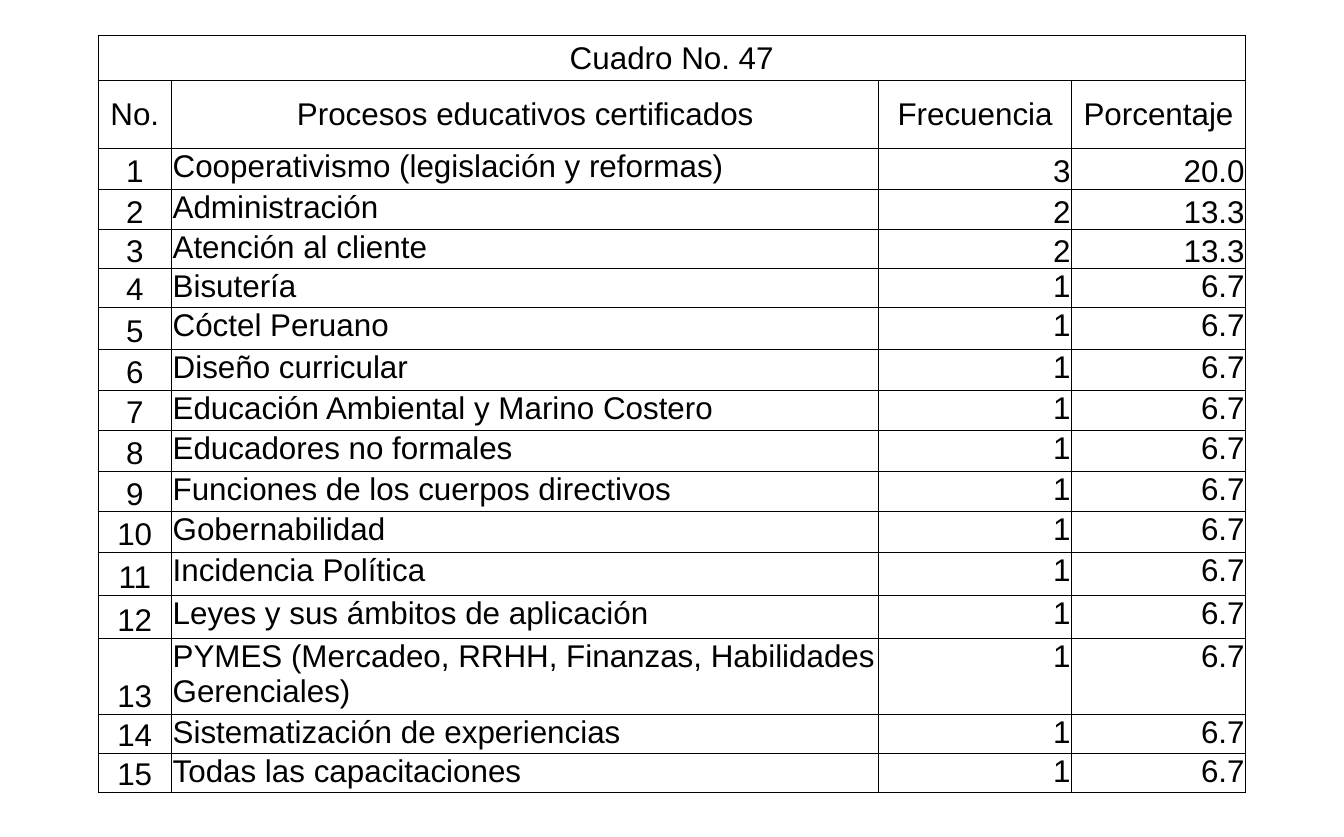
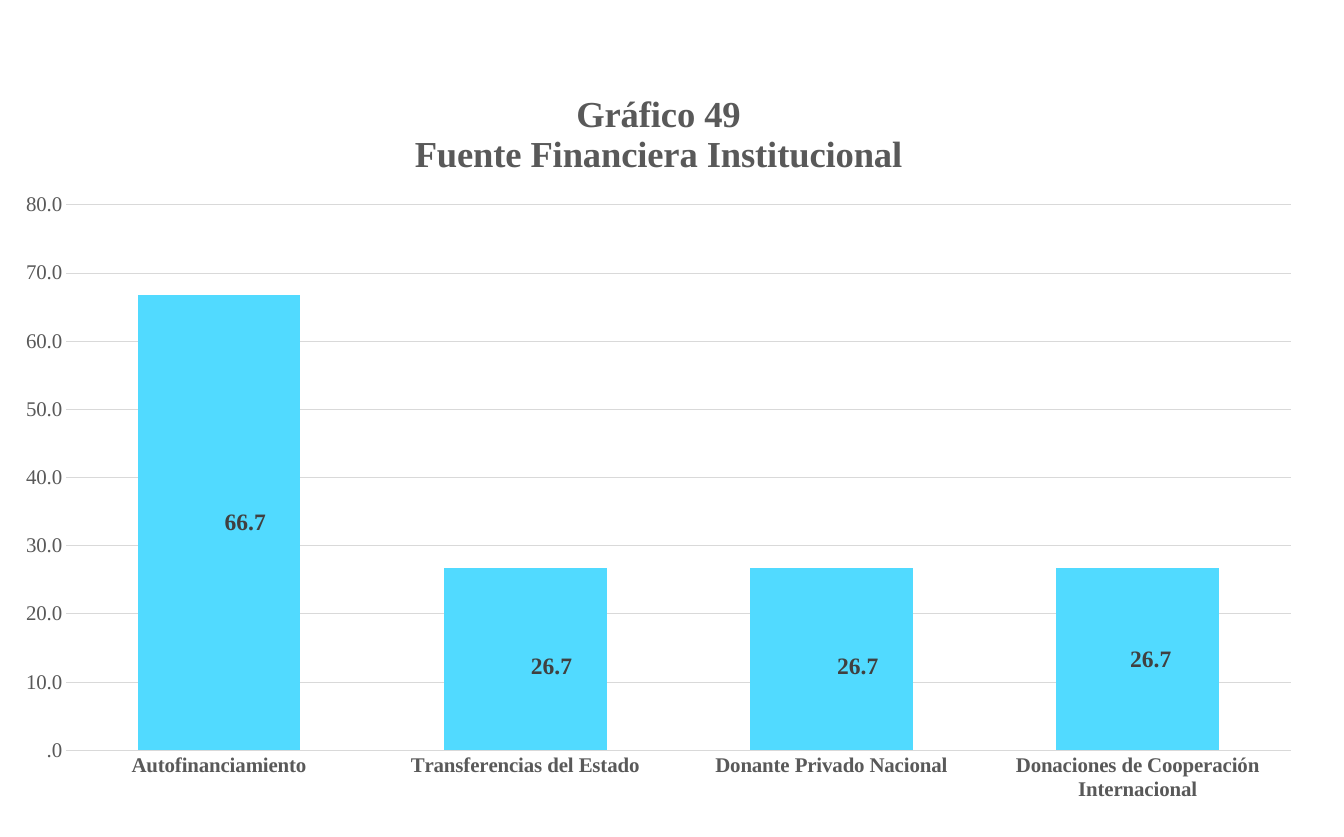
import functools
from dataclasses import dataclass

import lxml.etree
import pptx
import pptx.chart.data
import pptx.dml.color
import pptx.enum.chart
import pptx.enum.text
import pptx.oxml
import pptx.oxml.ns
import pptx.util

ALIGN = pptx.enum.text.PP_ALIGN
ANCHOR = pptx.enum.text.MSO_ANCHOR
NO_TICK = pptx.enum.chart.XL_TICK_MARK.NONE
rgb = pptx.dml.color.RGBColor.from_string


@dataclass(frozen=True)
class Theme:
    width: float = 14.29
    height: float = 8.9
    table_font: str = "Arial"
    chart_font: str = "Times New Roman"
    ink: str = "000000"
    paper: str = "FFFFFF"
    muted: str = "595959"
    label: str = "404040"
    rule: str = "D9D9D9"
    bar: str = "51DAFF"
    title_size: int = 28
    table_size: int = 24
    label_size: int = 18
    axis_size: int = 16
    border: float = 0.5
    grid_line: float = 0.75
    inset: float = 0.01


def style_font(font, name, size, color, bold=False):
    font.name, font.size, font.bold = name, pptx.util.Pt(size), bold
    font.color.rgb = rgb(color)


def write(frame, text, align=ALIGN.LEFT, **font_format):
    """Fill a text frame, one paragraph for each line of text."""
    for index, line in enumerate(text.split("\n")):
        paragraph = frame.add_paragraph() if index else frame.paragraphs[0]
        paragraph.alignment = align
        run = paragraph.add_run()
        run.text = line
        style_font(run.font, **font_format)


def style_line(line, color, width):
    line.color.rgb = rgb(color)
    line.width = pptx.util.Pt(width)


def add_borders(cell, color, width):
    properties = cell._tc.get_or_add_tcPr()
    for index, side in enumerate("LRTB"):
        properties.insert(index, pptx.oxml.parse_xml(
            f'<a:ln{side} {pptx.oxml.ns.nsdecls("a")} w="{pptx.util.Pt(width)}">'
            f'<a:solidFill><a:srgbClr val="{color}"/></a:solidFill></a:ln{side}>'))


def manual_layout(inner=False, **shares):
    """Return a chart layout with its x, y, w and h as shares of the chart."""
    settings = {"layoutTarget": "inner", "xMode": "edge", "yMode": "edge"} if inner else {}
    fields = "".join(f'<c:{key} val="{value}"/>' for key, value in {**settings, **shares}.items())
    return pptx.oxml.parse_xml(
        f'<c:layout {pptx.oxml.ns.nsdecls("c")}><c:manualLayout>{fields}'
        '</c:manualLayout></c:layout>')


def place_label(label, offset, paper, number_format):
    """Shift a data label and give it a paper-coloured box."""
    element = label._get_or_add_dLbl()
    number = pptx.oxml.parse_xml(
        f'<c:numFmt {pptx.oxml.ns.nsdecls("c")} formatCode="{number_format}" sourceLinked="0"/>')
    box = pptx.oxml.parse_xml(
        f'<c:spPr {pptx.oxml.ns.nsdecls("c", "a")}><a:solidFill>'
        f'<a:srgbClr val="{paper}"/></a:solidFill></c:spPr>')
    across, down = offset
    for index, part in enumerate((manual_layout(x=across, y=down), number, box), start=1):
        element.insert(index, part)


class Deck:
    """Holds the theme and the current slide; lengths are percent of the slide."""

    def __init__(self, theme):
        self.theme = theme
        self.presentation = pptx.Presentation()
        self.presentation.slide_width = self.across(100)
        self.presentation.slide_height = self.down(100)
        self.slide = None

    def across(self, percent):
        return pptx.util.Inches(self.theme.width * percent / 100)

    def down(self, percent):
        return pptx.util.Inches(self.theme.height * percent / 100)

    def new_slide(self):
        self.slide = self.presentation.slides.add_slide(self.presentation.slide_layouts[6])
        fill = self.slide.background.fill
        fill.solid()
        fill.fore_color.rgb = rgb(self.theme.paper)

    def cell(self, cell, text, align, anchor):
        theme = self.theme
        cell.fill.background()
        add_borders(cell, theme.ink, theme.border)
        cell.margin_left = cell.margin_right = cell.margin_top = pptx.util.Inches(theme.inset)
        cell.margin_bottom = 0
        cell.vertical_anchor = anchor
        write(cell.text_frame, text, align, name=theme.table_font,
              size=theme.table_size, color=theme.ink)

    def table(self, left, top, widths, heights, title, header, records, bottom_records):
        """Draw a titled table; figures of the first bottom_records sit low."""
        table = self.slide.shapes.add_table(
            len(heights), len(widths), self.across(left), self.down(top),
            self.across(sum(widths)), self.down(sum(heights))).table
        table.first_row = table.horz_banding = False
        for column, width in zip(table.columns, widths):
            column.width = self.across(width)
        for row, height in zip(table.rows, heights):
            row.height = self.down(height)
        table.cell(0, 0).merge(table.cell(0, len(widths) - 1))
        headings = [(title, "", "", ""), header]
        for r, values in enumerate(headings + records):
            is_heading = r < len(headings)
            figure_anchor = ANCHOR.BOTTOM if r < len(headings) + bottom_records else ANCHOR.TOP
            aligns = (ALIGN.CENTER, ALIGN.LEFT, ALIGN.RIGHT, ALIGN.RIGHT)
            anchors = (ANCHOR.BOTTOM, ANCHOR.TOP, figure_anchor, figure_anchor)
            for c, value in enumerate(values):
                self.cell(table.cell(r, c), value,
                          ALIGN.CENTER if is_heading else aligns[c],
                          ANCHOR.MIDDLE if is_heading else anchors[c])

    def column_chart(self, left, top, width, height, title, values, label_offsets,
                     plot_area, maximum, step, number_format):
        theme = self.theme
        styled = functools.partial(style_font, name=theme.chart_font)
        data = pptx.chart.data.CategoryChartData(number_format=number_format)
        data.categories = list(values)
        data.add_series("Series 1", list(values.values()))
        chart = self.slide.shapes.add_chart(
            pptx.enum.chart.XL_CHART_TYPE.COLUMN_STACKED, self.across(left), self.down(top),
            self.across(width), self.down(height), data).chart
        styled(chart.font, size=10, color=theme.ink)
        chart.has_legend = False
        chart.has_title = True
        chart.chart_title.include_in_layout = False
        write(chart.chart_title.text_frame, title, ALIGN.CENTER, name=theme.chart_font,
              size=theme.title_size, color=theme.muted, bold=True)

        area = chart._chartSpace.chart.plotArea
        for old_layout in area.findall(pptx.oxml.ns.qn("c:layout")):
            area.remove(old_layout)
        area.insert(0, manual_layout(inner=True, **plot_area))

        category_axis, value_axis = chart.category_axis, chart.value_axis
        for axis in (category_axis, value_axis):
            axis.major_tick_mark = axis.minor_tick_mark = NO_TICK
            styled(axis.tick_labels.font, size=theme.axis_size, color=theme.muted,
                   bold=axis is category_axis)
        style_line(category_axis.format.line, theme.rule, theme.grid_line)
        value_axis.format.line.fill.background()
        value_axis.minimum_scale, value_axis.maximum_scale = 0, maximum
        value_axis.major_unit = step
        value_axis.has_major_gridlines = True
        style_line(value_axis.major_gridlines.format.line, theme.rule, theme.grid_line)
        value_axis.tick_labels.number_format = number_format
        value_axis.tick_labels.number_format_is_linked = False

        plot = chart.plots[0]
        plot.gap_width, plot.overlap, plot.vary_by_categories = 88, 100, False
        series = plot.series[0]
        series.format.fill.solid()
        series.format.fill.fore_color.rgb = rgb(theme.bar)
        labels = series.data_labels
        labels.show_value = True
        labels.number_format, labels.number_format_is_linked = number_format, False
        label_style = dict(size=theme.label_size, color=theme.label, bold=True)
        styled(labels.font, **label_style)
        for index, offset in enumerate(label_offsets):
            label = series.points[index].data_label
            styled(label.font, **label_style)
            place_label(label, offset, theme.paper, number_format)


PROCESSES = [
    ("Cooperativismo (legislación y reformas)", "3", "20.0"),
    ("Administración", "2", "13.3"),
    ("Atención al cliente", "2", "13.3"),
] + [(name, "1", "6.7") for name in (
    "Bisutería",
    "Cóctel Peruano",
    "Diseño curricular",
    "Educación Ambiental y Marino Costero",
    "Educadores no formales",
    "Funciones de los cuerpos directivos",
    "Gobernabilidad",
    "Incidencia Política",
    "Leyes y sus ámbitos de aplicación",
    "PYMES (Mercadeo, RRHH, Finanzas, Habilidades Gerenciales)",
    "Sistematización de experiencias",
    "Todas las capacitaciones",
)]

FUNDING = {
    "Autofinanciamiento": 66.7,
    "Transferencias del Estado": 26.7,
    "Donante Privado Nacional": 26.7,
    "Donaciones de Cooperación Internacional": 26.7,
}


def main():
    deck = Deck(Theme())

    deck.new_slide()
    deck.table(
        left=7.28, top=4.25,
        widths=[5.5, 52.6, 14.35, 12.95],
        heights=[5.4, 8.1, 4.85, 4.85, 4.65, 4.65, 5, 4.9, 4.8, 4.9, 4.8, 4.8,
                 5.2, 5.1, 9.1, 4.65, 4.65],
        title="Cuadro No. 47",
        header=("No.", "Procesos educativos certificados", "Frecuencia", "Porcentaje"),
        records=[(str(number), *process) for number, process in enumerate(PROCESSES, start=1)],
        bottom_records=3)

    deck.new_slide()
    deck.column_chart(
        left=0, top=8.4, width=98, height=89.3,
        title="Gráfico 49\nFuente Financiera Institucional",
        values=FUNDING,
        label_offsets=[(0.02, 0), (0.02, 0.01), (0.02, 0.01), (0.01, 0)],
        plot_area=dict(x=0.05, y=0.18, w=0.93, h=0.73),
        maximum=80, step=10, number_format="####.0")

    deck.presentation.save("out.pptx")


if __name__ == "__main__":
    main()
